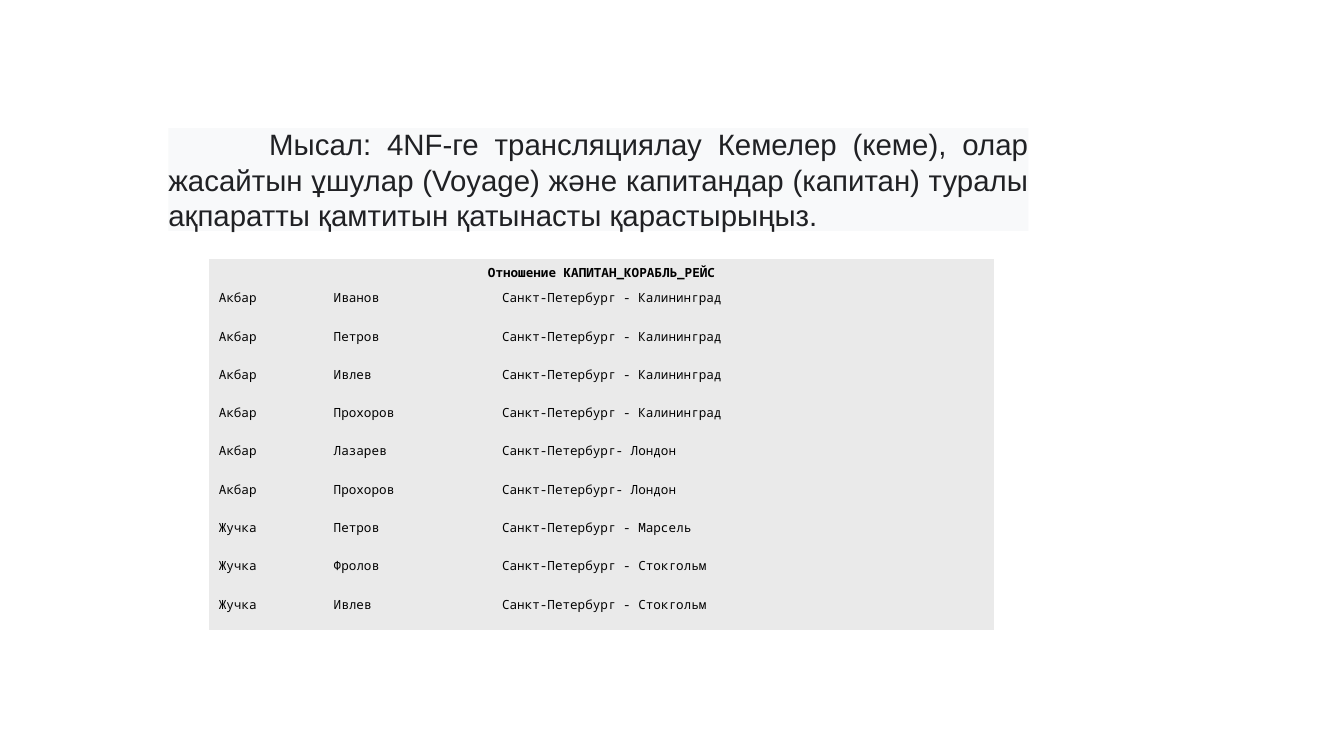
from pptx import Presentation
from pptx.dml.color import RGBColor
from pptx.enum.text import MSO_ANCHOR, MSO_AUTO_SIZE, PP_ALIGN
from pptx.oxml.ns import qn
from pptx.util import Inches, Pt

MIDDLE, TOP = MSO_ANCHOR.MIDDLE, MSO_ANCHOR.TOP
CENTER, LEFT, JUSTIFY = PP_ALIGN.CENTER, PP_ALIGN.LEFT, PP_ALIGN.JUSTIFY

INTRO = (
    "Мысал: 4NF-ге трансляциялау Кемелер (кеме), олар жасайтын ұшулар (Voyage) "
    "және капитандар (капитан) туралы ақпаратты қамтитын қатынасты қарастырыңыз."
)
RELATION_NAME = "Отношение КАПИТАН_КОРАБЛЬ_РЕЙС"
VOYAGES = [
    ("Акбар", "Иванов", "Санкт-Петербург - Калининград"),
    ("Акбар", "Петров", "Санкт-Петербург - Калининград"),
    ("Акбар", "Ивлев", "Санкт-Петербург - Калининград"),
    ("Акбар", "Прохоров", "Санкт-Петербург - Калининград"),
    ("Акбар", "Лазарев", "Санкт-Петербург- Лондон"),
    ("Акбар", "Прохоров", "Санкт-Петербург- Лондон"),
    ("Жучка", "Петров", "Санкт-Петербург - Марсель"),
    ("Жучка", "Фролов", "Санкт-Петербург - Стокгольм"),
    ("Жучка", "Ивлев", "Санкт-Петербург - Стокгольм"),
]

THEME = {
    "intro": {"name": "Arial", "size": Pt(21), "color": "202124"},
    "heading": {"name": "Noto Sans Mono", "size": Pt(9), "color": "000000", "bold": True},
    "entry": {"name": "Noto Sans Mono", "size": Pt(9), "color": "000000", "bold": False},
    "intro_fill": "F8F9FA",
    "table_fill": "EAEAEA",
    "plain_table_style": "{2D5ABB26-0587-4C30-8999-92F81FD0307C}",
}
INTRO_BOX = [Inches(n) for n in (1.67, 1.27, 8.53, 1.02)]
TABLE_LEFT, TABLE_TOP = Inches(2.07), Inches(2.57)
COLUMN_WIDTHS = [Inches(n) for n in (1.14, 1.67, 4.98)]
ROW_HEIGHTS = [Inches(0.26)] + [Inches(0.38)] * len(VOYAGES)
FIRST_LINE_INDENT = Inches(1)
HANGING_INDENT = Inches(0.38)


def set_attributes(target, values):
    for key, value in values.items():
        setattr(target, key, value)


def fill_solid(target, color):
    target.fill.solid()
    target.fill.fore_color.rgb = RGBColor.from_string(color)


def write(paragraph, text, style, align, margin, indent):
    paragraph.alignment = align
    properties = paragraph._p.get_or_add_pPr()
    properties.set("marL", str(margin))
    properties.set("indent", str(indent))
    run = paragraph.add_run()
    run.text = text
    for key, value in THEME[style].items():
        if key == "color":
            run.font.color.rgb = RGBColor.from_string(value)
        else:
            setattr(run.font, key, value)


def add_intro(slide):
    intro = slide.shapes.add_textbox(*INTRO_BOX)
    fill_solid(intro, THEME["intro_fill"])
    set_attributes(intro.text_frame, {
        "word_wrap": True,
        "auto_size": MSO_AUTO_SIZE.SHAPE_TO_FIT_TEXT,
        "vertical_anchor": MIDDLE,
        "margin_left": 0,
        "margin_right": 0,
        "margin_top": Inches(-0.02),
        "margin_bottom": Inches(-0.02),
    })
    write(intro.text_frame.paragraphs[0], INTRO, "intro", JUSTIFY, 0, FIRST_LINE_INDENT)


def write_cell(cell, text, style, align, anchor):
    set_attributes(cell, {
        "vertical_anchor": anchor,
        "margin_left": Inches(0.1),
        "margin_right": Inches(0.1),
        "margin_top": Inches(0.04),
        "margin_bottom": Inches(0.04),
    })
    write(cell.text_frame.paragraphs[0], text, style, align, HANGING_INDENT, -HANGING_INDENT)


def add_voyage_table(slide):
    table = slide.shapes.add_table(
        len(ROW_HEIGHTS), len(COLUMN_WIDTHS), TABLE_LEFT, TABLE_TOP,
        sum(COLUMN_WIDTHS), sum(ROW_HEIGHTS),
    ).table
    set_attributes(table, {"first_row": False, "horz_banding": False})
    table._tbl.tblPr.find(qn("a:tableStyleId")).text = THEME["plain_table_style"]
    for column, width in zip(table.columns, COLUMN_WIDTHS):
        column.width = width
    for row, height in zip(table.rows, ROW_HEIGHTS):
        row.height = height
    for cell in table.iter_cells():
        fill_solid(cell, THEME["table_fill"])

    heading = table.cell(0, 0)
    heading.merge(table.cell(0, len(COLUMN_WIDTHS) - 1))
    write_cell(heading, RELATION_NAME, "heading", CENTER, MIDDLE)
    for row_number, voyage in enumerate(VOYAGES, start=1):
        for column_number, entry in enumerate(voyage):
            write_cell(table.cell(row_number, column_number), entry, "entry", LEFT, TOP)


def main():
    presentation = Presentation()
    presentation.slide_width = Inches(13.33)
    presentation.slide_height = Inches(7.5)
    slide = presentation.slides.add_slide(presentation.slide_layouts[6])
    add_intro(slide)
    add_voyage_table(slide)
    presentation.save("out.pptx")


if __name__ == "__main__":
    main()
